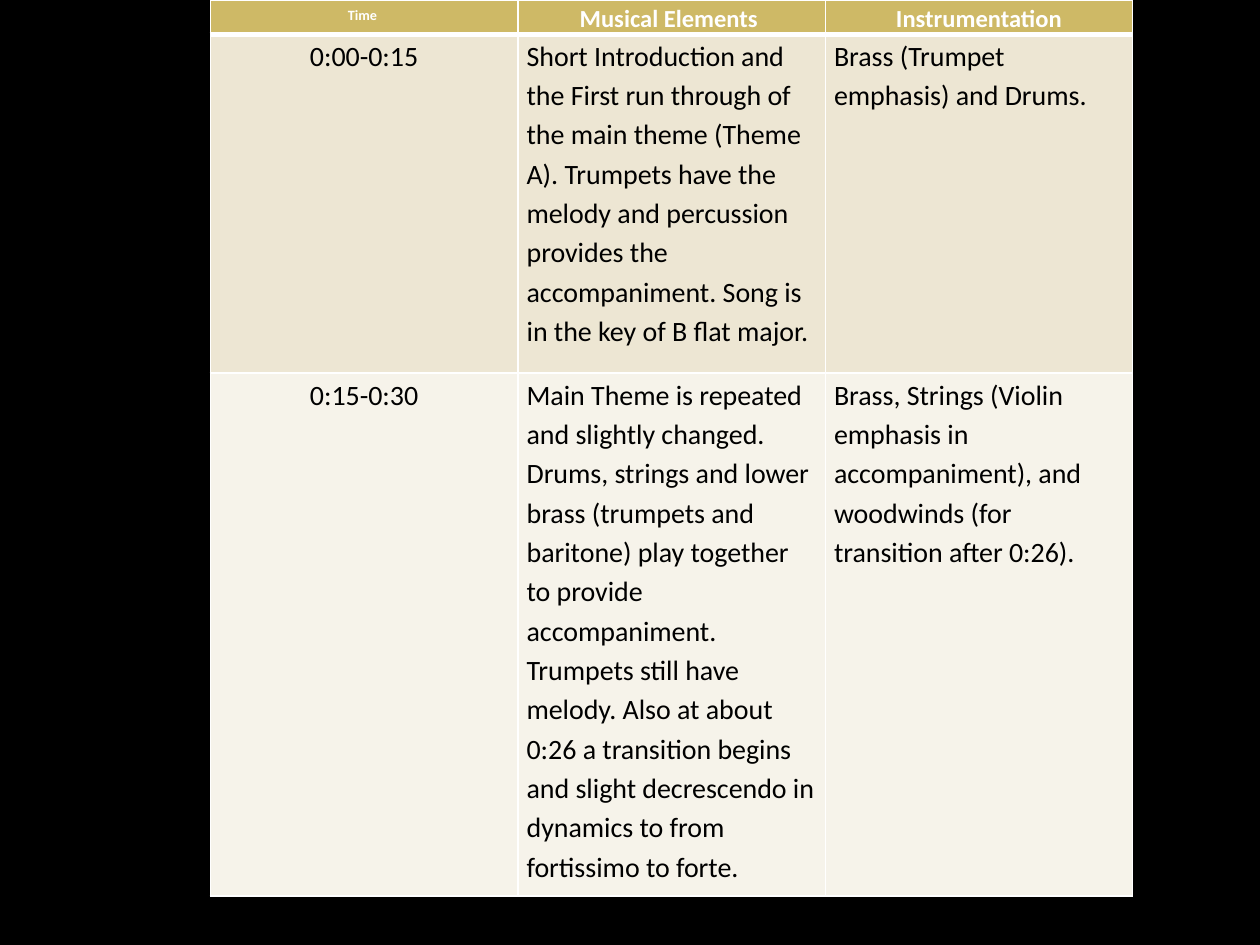
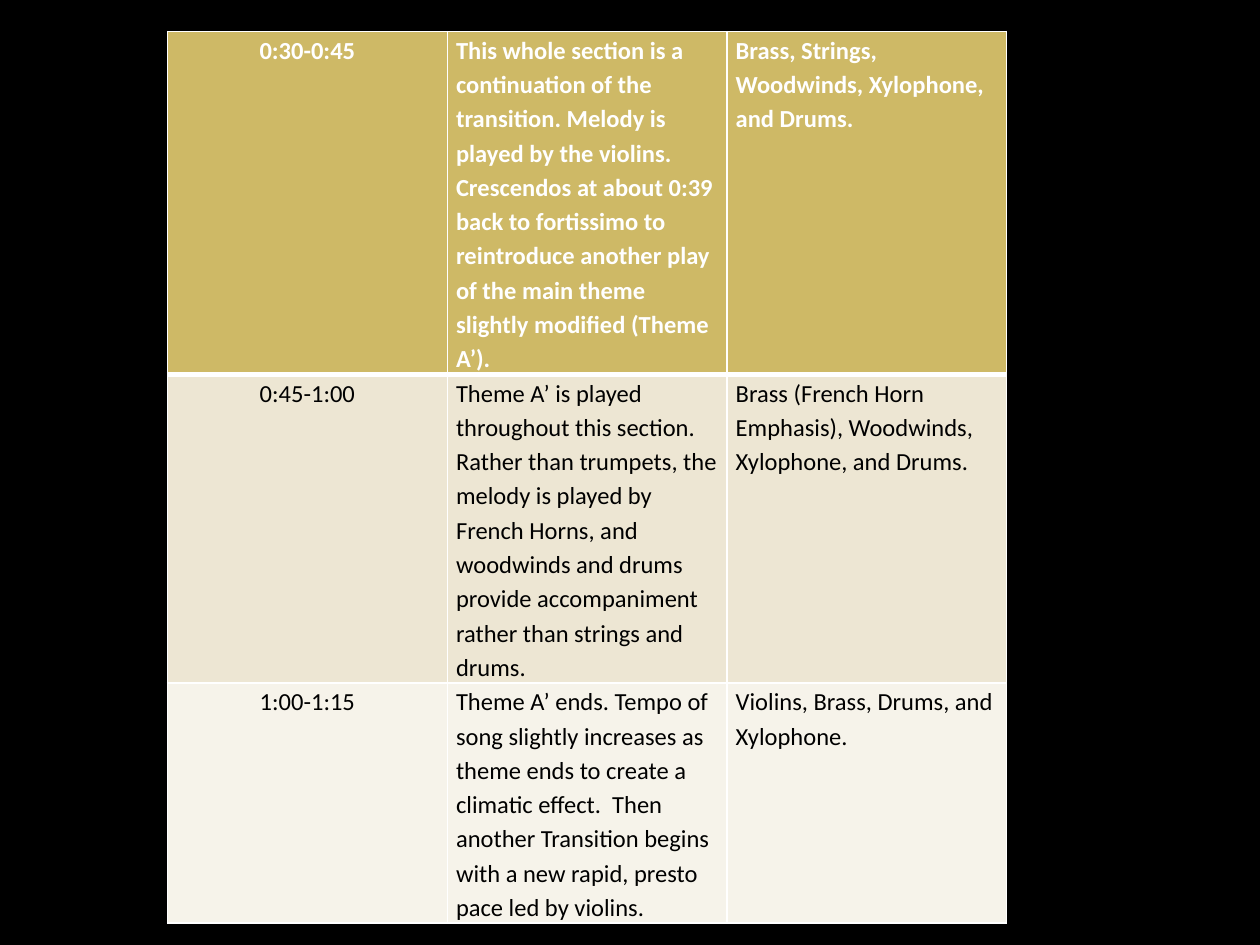
from lxml.etree import SubElement as Sub
from pptx import Presentation
from pptx.dml.color import RGBColor
from pptx.enum.text import PP_ALIGN as Align
from pptx.oxml.ns import qn
from pptx.util import Inches, Pt

GOLD, SAND, CREAM = "CEB966", "EDE6D3", "F6F3EA"
WHITE, BLACK = "FFFFFF", "000000"
FONT = "Calibri"


def paint(fill, hue):
    fill.solid()
    fill.fore_color.rgb = RGBColor.from_string(hue)


def edge(cell, side, width):
    line = Sub(cell._tc.get_or_add_tcPr(), qn(f"a:ln{side}"), w=str(Pt(width)))
    Sub(Sub(line, qn("a:solidFill")), qn("a:srgbClr"), val=WHITE)


pages = [
    {
        "left": 1.67, "top": 0, "width": 2.44, "size": 16,
        "heights": [0.24, 2.69, 4.15], "titled": True,
        "rows": [
            ["Time ", "Musical Elements ", "Instrumentation"],
            ["0:00-0:15",
             "Short Introduction and the First run through of the main theme (Theme A). "
             "Trumpets have the melody and percussion provides the accompaniment. "
             "Song is in the key of B flat major.",
             "Brass (Trumpet emphasis) and Drums."],
            ["0:15-0:30",
             "Main Theme is repeated and slightly changed. Drums, strings and lower brass "
             "(trumpets and baritone) play together to provide accompaniment. Trumpets still "
             "have melody. Also at about 0:26 a transition begins and slight decrescendo in "
             "dynamics to from fortissimo to forte.",
             "Brass, Strings (Violin emphasis in accompaniment), and woodwinds "
             "(for transition after 0:26)."],
        ],
    },
    {
        "left": 1.33, "top": 0.25, "width": 2.22, "size": 14,
        "heights": [2.72, 2.45, 1.9], "titled": False,
        "rows": [
            ["0:30-0:45",
             "This whole section is a continuation of the transition. Melody is played by the "
             "violins. Crescendos at about 0:39 back to fortissimo to reintroduce another play "
             "of the main theme slightly modified (Theme A’).",
             "Brass, Strings, Woodwinds, Xylophone, and Drums."],
            ["0:45-1:00",
             "Theme A’ is played throughout this section. Rather than trumpets, the melody is "
             "played by French Horns, and woodwinds and drums provide accompaniment rather "
             "than strings and drums.",
             "Brass (French Horn Emphasis), Woodwinds, Xylophone, and Drums."],
            ["1:00-1:15",
             "Theme A’ ends. Tempo of song slightly increases as theme ends to create a climatic "
             "effect.  Then another Transition begins with a new rapid, presto pace led by violins.",
             "Violins, Brass, Drums, and Xylophone."],
        ],
    },
]

deck = Presentation()
deck.slide_width, deck.slide_height = Inches(10), Inches(7.5)

for page in pages:
    slide = deck.slides.add_slide(deck.slide_layouts[6])
    paint(slide.background.fill, BLACK)
    table = slide.shapes.add_table(
        3, 3, Inches(page["left"]), Inches(page["top"]),
        Inches(3 * page["width"]), Inches(sum(page["heights"]))).table
    for col in table.columns:
        col.width = Inches(page["width"])
    for r, texts in enumerate(page["rows"]):
        table.rows[r].height = Inches(page["heights"][r])
        head = r == 0
        for c, text in enumerate(texts):
            cell = table.cell(r, c)
            cell.margin_left = cell.margin_right = Inches(0.07)
            cell.margin_top = cell.margin_bottom = 0
            edge(cell, "L", 1)
            edge(cell, "R", 1)
            edge(cell, "T", 3 if r == 1 else 1)
            edge(cell, "B", 3 if head else 1)
            paint(cell.fill, [GOLD, SAND, CREAM][r])
            para = cell.text_frame.paragraphs[0]
            para.text = text
            para.line_spacing = 1.15
            titled = head and page["titled"]
            para.alignment = Align.CENTER if c == 0 or titled else Align.LEFT
            font = para.runs[0].font
            font.name, font.bold = FONT, head
            font.size = Pt(14 if head else page["size"])
            font.color.rgb = RGBColor.from_string(WHITE if head else BLACK)
            if titled and c == 0:
                font._element.set("baseline", "30000")

deck.save("out.pptx")
